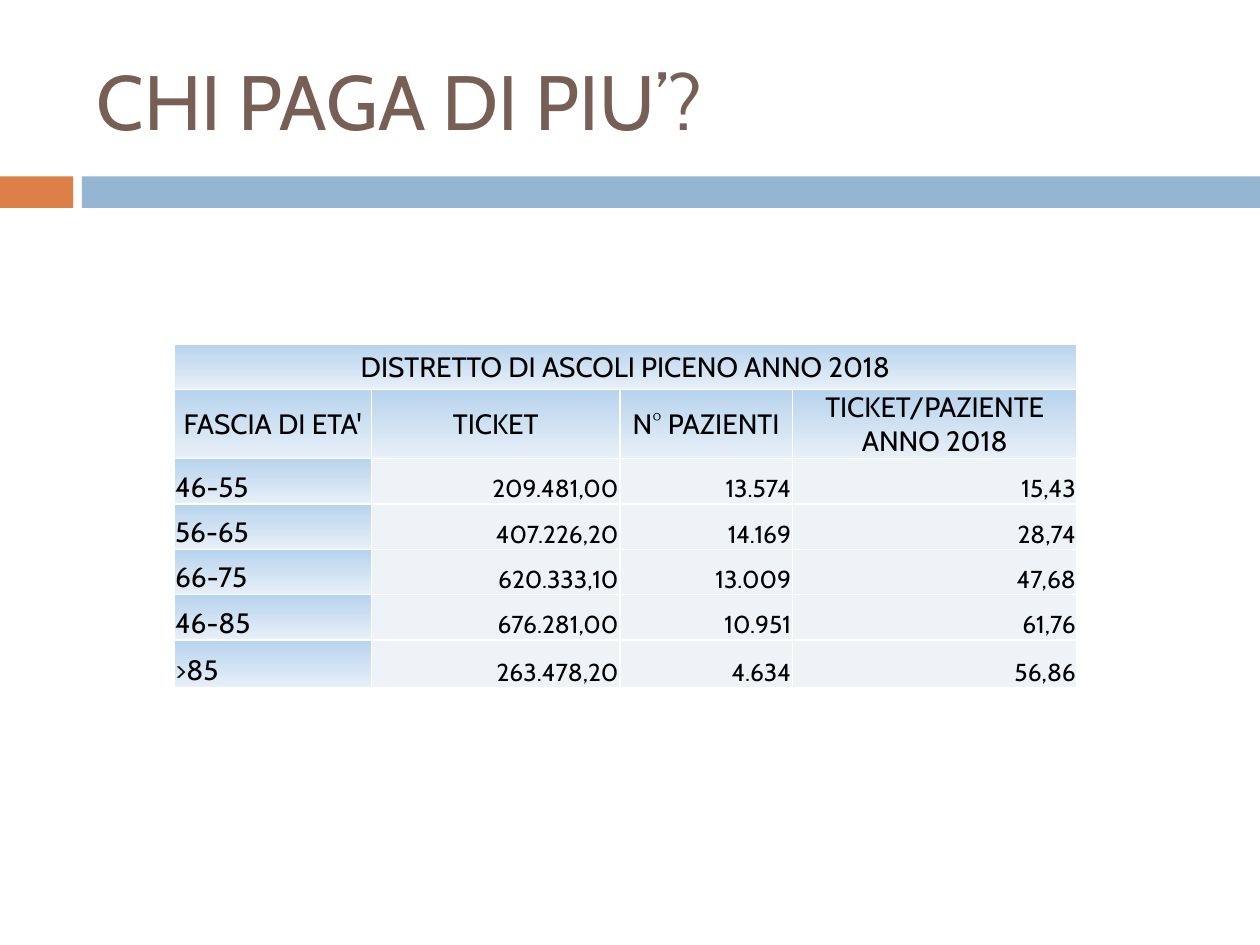
import pptx
import pptx.util
import pptx.dml.color
import pptx.enum.shapes
import pptx.enum.text
import pptx.oxml
import pptx.oxml.ns

Inches = pptx.util.Inches
Align = pptx.enum.text.PP_ALIGN
Anchor = pptx.enum.text.MSO_ANCHOR

FONT = "Cabin"
HEAD = ["FASCIA DI ETA'", "TICKET", "N° PAZIENTI", "TICKET/PAZIENTE ANNO 2018"]
ROWS = [
    ["46-55", "209.481,00", "13.574", "15,43"],
    ["56-65", "407.226,20", "14.169", "28,74"],
    ["66-75", "620.333,10", "13.009", "47,68"],
    ["46-85", "676.281,00", "10.951", "61,76"],
    [">85", "263.478,20", "4.634", "56,86"],
]


def color(code):
    return pptx.dml.color.RGBColor.from_string(code)


def write(frame, text, size, code, align):
    frame.text = text
    para = frame.paragraphs[0]
    para.alignment = align
    for run in para.runs:
        run.font.name = FONT
        run.font.size = pptx.util.Pt(size)
        run.font.color.rgb = color(code)


def add_title(slide, left, top, width, height):
    box = slide.shapes.add_textbox(Inches(left), Inches(top), Inches(width), Inches(height))
    frame = box.text_frame
    frame.word_wrap = True
    frame.vertical_anchor = Anchor.MIDDLE
    write(frame, "CHI PAGA DI PIU’?", 44, "775F55", Align.LEFT)


def add_band(slide, left, top, width, height):
    tab, gap = 0.58, 0.07
    rest = tab + gap
    for start, size, code in [(0, tab, "DD8047"), (rest, width - rest, "94B6D2")]:
        bar = slide.shapes.add_shape(
            pptx.enum.shapes.MSO_SHAPE.RECTANGLE,
            Inches(left + start), Inches(top), Inches(size), Inches(height))
        bar.shadow.inherit = False
        bar.fill.solid()
        bar.fill.fore_color.rgb = color(code)
        bar.line.fill.background()


def add_border(cell):
    props = cell._tc.get_or_add_tcPr()
    space = pptx.oxml.ns.nsdecls("a")
    for side in "LRTB":
        props.append(pptx.oxml.parse_xml(
            f'<a:ln{side} {space} w="12700"><a:solidFill>'
            f'<a:srgbClr val="FFFFFF"/></a:solidFill></a:ln{side}>'))


def paint(cell, shaded):
    if shaded:
        cell.fill.gradient()
        cell.fill.gradient_angle = 270
        for stop, code in zip(cell.fill.gradient_stops, ["B7D3ED", "E8F0F8"]):
            stop.color.rgb = color(code)
    else:
        cell.fill.solid()
        cell.fill.fore_color.rgb = color("EEF3F7")


def add_grid(slide, left, top, width, height):
    data = [["DISTRETTO DI ASCOLI PICENO ANNO 2018", "", "", ""], HEAD] + ROWS
    table = slide.shapes.add_table(
        len(data), len(HEAD), Inches(left), Inches(top), Inches(width), Inches(height)).table
    for col, size in zip(table.columns, [1.57, 1.97, 1.37, 2.26]):
        col.width = Inches(size)
    for row, size in zip(table.rows, [0.36, 0.55] + [0.36] * 4 + [0.38]):
        row.height = Inches(size)
    table.cell(0, 0).merge(table.cell(0, len(HEAD) - 1))
    for r, line in enumerate(data):
        for c, text in enumerate(line):
            cell = table.cell(r, c)
            top_row = r < 2
            shaded = top_row or c == 0
            cell.margin_left = cell.margin_right = cell.margin_top = Inches(0.01)
            cell.margin_bottom = 0
            cell.vertical_anchor = Anchor.MIDDLE if top_row else Anchor.BOTTOM
            add_border(cell)
            paint(cell, shaded)
            if text:
                align = Align.CENTER if top_row else Align.LEFT if c == 0 else Align.RIGHT
                write(cell.text_frame, text, 16 if shaded else 14, "000000", align)


def main():
    deck = pptx.Presentation()
    deck.slide_width, deck.slide_height = Inches(10), Inches(7.5)
    slide = deck.slides.add_slide(deck.slide_layouts[6])
    add_band(slide, 0, 1.4, 10, 0.25)
    add_title(slide, 0.67, 0.25, 8.92, 1.08)
    add_grid(slide, 1.38, 2.73, 7.17, 2.73)
    deck.save("out.pptx")


if __name__ == "__main__":
    main()
